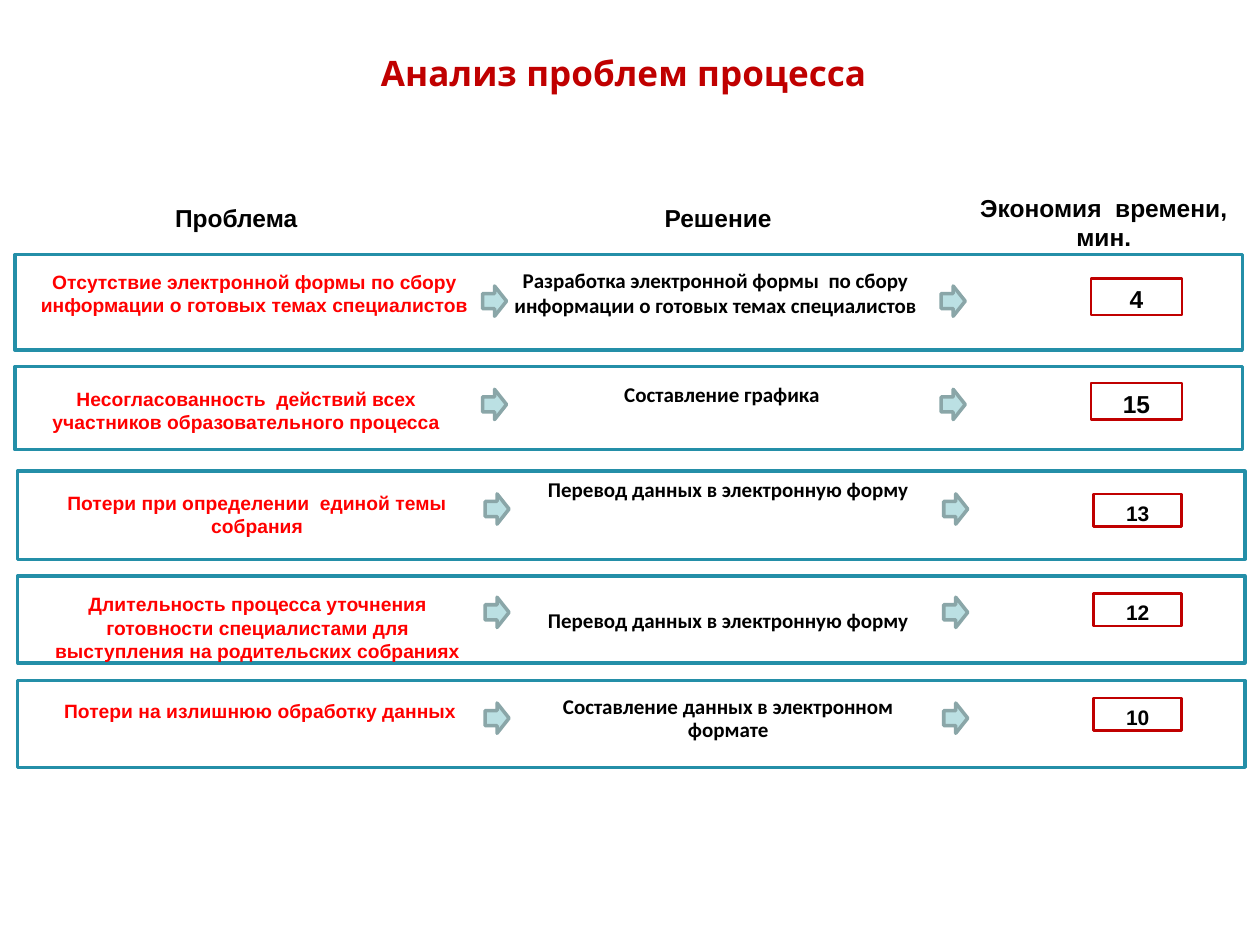
from dataclasses import dataclass

from pptx import Presentation
from pptx.dml.color import RGBColor
from pptx.enum.shapes import MSO_SHAPE
from pptx.enum.text import MSO_ANCHOR, PP_ALIGN
from pptx.util import Inches, Pt

RECT, ARROW = MSO_SHAPE.RECTANGLE, MSO_SHAPE.RIGHT_ARROW
TOP, MIDDLE = MSO_ANCHOR.TOP, MSO_ANCHOR.MIDDLE
CENTER = PP_ALIGN.CENTER

HEADING_INSETS = (0.1, 0.05, 0.1, 0.01)
CELL_INSETS = (0.1, 0.09, 0.1, 0.01)
PLAIN_INSETS = (0.1, 0.05, 0.1, 0.05)


@dataclass(frozen=True)
class Theme:
    title: tuple = ("League Spartan", 20, "C00000")
    heading: tuple = ("Arial", 14, "000000")
    problem: tuple = ("Arial", 11, "FF0000")
    solution: tuple = ("Calibri", 12, "000000")
    value_large: tuple = ("Arial", 14, "000000")
    value_small: tuple = ("Arial", 12, "000000")
    card_line: str = "248FA8"
    value_line: str = "C00000"
    arrow_fill: str = "BBE0E3"
    arrow_line: str = "8AA6A8"


@dataclass(frozen=True)
class Row:
    top: float
    height: float
    arrow_top: float
    problem: str
    problem_box: tuple
    solution: str
    solution_box: tuple
    solution_format: dict
    value: str
    value_top: float
    large: bool = False


class SlideBuilder:
    def __init__(self, slide, theme):
        self.s = slide
        self.theme = theme

    def set_text(self, sp, text, style, insets=CELL_INSETS, anchor=MIDDLE,
                 spacing=1.0, wrap=True):
        tf = sp.text_frame
        left, top, right, bottom = map(Inches, insets)
        frame = {"word_wrap": wrap, "vertical_anchor": anchor,
                 "margin_left": left, "margin_top": top,
                 "margin_right": right, "margin_bottom": bottom}
        for name, value in frame.items():
            setattr(tf, name, value)
        p = tf.paragraphs[0]
        p.alignment, p.line_spacing = CENTER, spacing
        r = p.add_run()
        r.text = text
        font, size, color = style
        for name, value in {"name": font, "size": Pt(size), "bold": True}.items():
            setattr(r.font, name, value)
        r.font.color.rgb = RGBColor.from_string(color)

    def text(self, box, text, style, **format_values):
        sp = self.s.shapes.add_textbox(*map(Inches, box))
        self.set_text(sp, text, style, **format_values)

    def shape(self, kind, box, line, width, fill=None):
        sp = self.s.shapes.add_shape(kind, *map(Inches, box))
        sp.shadow.inherit = False
        if fill:
            sp.fill.solid()
            sp.fill.fore_color.rgb = RGBColor.from_string(fill)
        else:
            sp.fill.background()
        sp.line.color.rgb = RGBColor.from_string(line)
        sp.line.width = Pt(width)
        return sp

    def arrow(self, left, top):
        self.shape(ARROW, (left, top, 0.19, 0.24), self.theme.arrow_line, 2,
                   self.theme.arrow_fill)

    def value(self, row):
        if row.large:
            box, style = (8.66, row.value_top, 0.72, 0.29), self.theme.value_large
        else:
            box, style = (8.68, row.value_top, 0.7, 0.26), self.theme.value_small
        sp = self.shape(RECT, box, self.theme.value_line, 1.5)
        self.set_text(sp, row.value, style, spacing=0.8)

    def row(self, row):
        left = 0.12 if row.large else 0.14
        self.shape(RECT, (left, row.top, 9.74, row.height), self.theme.card_line, 2)
        self.text(row.problem_box, row.problem, self.theme.problem)
        self.text(row.solution_box, row.solution, self.theme.solution,
                  **row.solution_format)
        for offset in (3.71, 7.35):
            self.arrow(left + offset, row.arrow_top)
        self.value(row)


PLAIN = {"insets": PLAIN_INSETS, "anchor": TOP}
TIGHT = {**PLAIN, "spacing": 0.93}

HEADINGS = [
    ("Проблема", (0.96, 1.56, 1.83, 0.3)),
    ("Решение", (4.83, 1.56, 1.74, 0.3)),
    ("Экономия  времени, мин.", (7.52, 1.48, 2.48, 0.53)),
]
ROWS = [
    Row(2.02, 0.76, 2.27,
        "Отсутствие электронной формы по сбору информации о готовых темах специалистов",
        (0.02, 2.05, 4, 0.47),
        "Разработка электронной формы  по сбору информации о готовых темах специалистов",
        (3.98, 2.03, 3.4, 0.71), {"anchor": TOP}, "4", 2.21, True),
    Row(2.91, 0.66, 3.09,
        "Несогласованность  действий всех участников образовательного процесса",
        (0.22, 2.98, 3.47, 0.47),
        "Составление графика",
        (4.12, 2.97, 3.22, 0.27), {"spacing": 0.8}, "15", 3.04, True),
    Row(3.74, 0.7, 3.92,
        "Потери при определении  единой темы собрания",
        (0.14, 3.81, 3.8, 0.47),
        "Перевод данных в электронную форму",
        (4.14, 3.75, 3.28, 0.29), TIGHT, "13", 3.92),
    Row(4.57, 0.69, 4.74,
        "Длительность процесса уточнения готовности специалистами для "
        "выступления на родительских собраниях",
        (0.25, 4.61, 3.59, 0.66),
        "Перевод данных в электронную форму",
        (4.14, 4.77, 3.28, 0.3), PLAIN, "12", 4.71),
    Row(5.4, 0.69, 5.58,
        "Потери на излишнюю обработку данных",
        (0.27, 5.45, 3.59, 0.31),
        "Составление данных в электронном формате",
        (4.14, 5.47, 3.28, 0.48), TIGHT, "10", 5.54),
]


def main():
    prs = Presentation()
    prs.slide_width, prs.slide_height = Inches(10), Inches(7.5)
    theme = Theme()
    builder = SlideBuilder(prs.slides.add_slide(prs.slide_layouts[6]), theme)
    builder.text((0.2, 0.36, 9.5, 0.93), "Анализ проблем процесса", theme.title,
                 wrap=False, **PLAIN)
    for heading, box in HEADINGS:
        builder.text(box, heading, theme.heading, insets=HEADING_INSETS, anchor=TOP)
    for row in ROWS:
        builder.row(row)
    prs.save("out.pptx")


if __name__ == "__main__":
    main()
